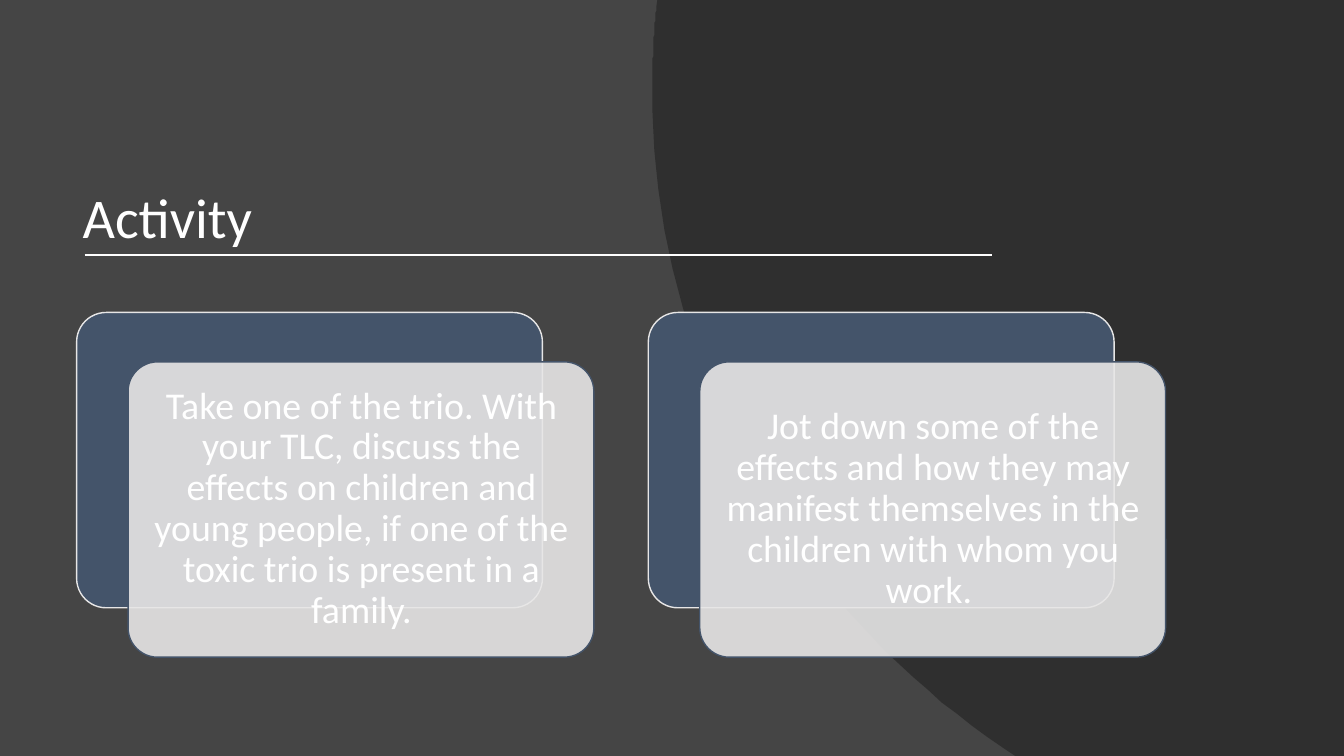
from lxml.etree import SubElement
from pptx import Presentation
from pptx.dml.color import RGBColor
from pptx.enum.shapes import MSO_CONNECTOR as Link, MSO_SHAPE as Kind
from pptx.enum.text import MSO_ANCHOR as Anchor, MSO_AUTO_SIZE as Fit, PP_ALIGN as Align
from pptx.oxml.ns import qn
from pptx.util import Pt

PX = 9144
WIDE, HIGH = 1333, 750
WHITE, NAVY, PALE = "FFFFFF", "44546A", "E7E6E6"
CARDS = [
    "Take one of the trio. With your TLC, discuss the effects on children and "
    "young people, if one of the toxic trio is present in a family.",
    "Jot down some of the effects and how they may manifest themselves in the "
    "children with whom you work. ",
]


def tint(code):
    return RGBColor.from_string(code)


def bend(a, b, c, d, steps=40):
    for n in range(1, steps + 1):
        t = n / steps
        u = 1 - t
        yield tuple(u**3 * p + 3 * u * u * t * q + 3 * u * t * t * r + t**3 * s
                    for p, q, r, s in zip(a, b, c, d))


class Deck:
    font = "Calibri"

    def __init__(self):
        self.prs = Presentation()
        self.prs.slide_width, self.prs.slide_height = WIDE * PX, HIGH * PX
        self.slide = self.prs.slides.add_slide(self.prs.slide_layouts[5])
        self.shapes = self.slide.shapes

    def ground(self, code):
        fill = self.slide.background.fill
        fill.solid()
        fill.fore_color.rgb = tint(code)

    def paint(self, shape, code, alpha=100, edge=None):
        shape.shadow.inherit = False
        shape.fill.solid()
        shape.fill.fore_color.rgb = tint(code)
        if alpha < 100:
            node = shape.element.spPr.find(qn("a:solidFill")).find(qn("a:srgbClr"))
            SubElement(node, qn("a:alpha"), val=str(alpha * 1000))
        if edge:
            shape.line.color.rgb = tint(edge)
            shape.line.width = Pt(1)
        else:
            shape.line.fill.background()

    def fill_text(self, frame, text, size, anchor, align):
        frame.word_wrap = True
        frame.auto_size = Fit.NONE
        frame.vertical_anchor = anchor
        para = frame.paragraphs[0]
        para.alignment, para.line_spacing = align, 0.9
        run = para.add_run()
        run.text = text
        run.font.name, run.font.size = self.font, Pt(size)
        run.font.color.rgb = tint(WHITE)

    def title(self, text, x, y, w, h):
        box = self.shapes.title
        box.left, box.top, box.width, box.height = (v * PX for v in (x, y, w, h))
        self.fill_text(box.text_frame, text, 40, Anchor.BOTTOM, Align.LEFT)

    def curve(self, start, points, code, alpha):
        form = self.shapes.build_freeform(*start, scale=PX)
        form.add_line_segments(points, close=True)
        shape = form.convert_to_shape()
        self.paint(shape, code, alpha)
        node = shape.element
        node.getparent().insert(2, node)

    def rule(self, x, y, end):
        line = self.shapes.add_connector(Link.STRAIGHT, x * PX, y * PX, end * PX, y * PX)
        line.line.color.rgb = tint(WHITE)
        line.line.width = Pt(1.5)
        SubElement(line.element.spPr, qn("a:effectLst"))

    def panel(self, x, y, w, h, code, alpha, edge):
        shape = self.shapes.add_shape(Kind.ROUNDED_RECTANGLE, x * PX, y * PX, w * PX, h * PX)
        shape.adjustments[0] = 0.1
        self.paint(shape, code, alpha, edge)

    def label(self, text, x, y, w, h):
        frame = self.shapes.add_textbox(x * PX, y * PX, w * PX, h * PX).text_frame
        frame.margin_left = frame.margin_right = 11 * PX
        frame.margin_top = frame.margin_bottom = 11 * PX
        self.fill_text(frame, text, 27, Anchor.MIDDLE, Align.CENTER)

    def card(self, text, x, y, w=462, h=293):
        self.panel(x, y, w, h, NAVY, 100, PALE)
        self.panel(x + 51, y + 49, w, h, PALE, 90, NAVY)
        self.label(text, x + 60, y + 57, w - 17, h - 17)


def main():
    deck = Deck()
    deck.ground("454545")
    low, mid, top = (995, 742), (647, 88), (651, 7)
    edge = [(WIDE, 0), (WIDE, HIGH), (1007, HIGH), low,
            *bend(low, (785, 600), (647, 360), mid),
            *bend(mid, (647, 61), (648, 34), top)]
    deck.curve((652, 0), edge, "262626", 70)
    deck.title("Activity", 72, 76, 986, 178)
    deck.rule(84, 253, 984)
    for n, text in enumerate(CARDS):
        deck.card(text, 76 + 567 * n, 310)
    deck.prs.save("out.pptx")


if __name__ == "__main__":
    main()
